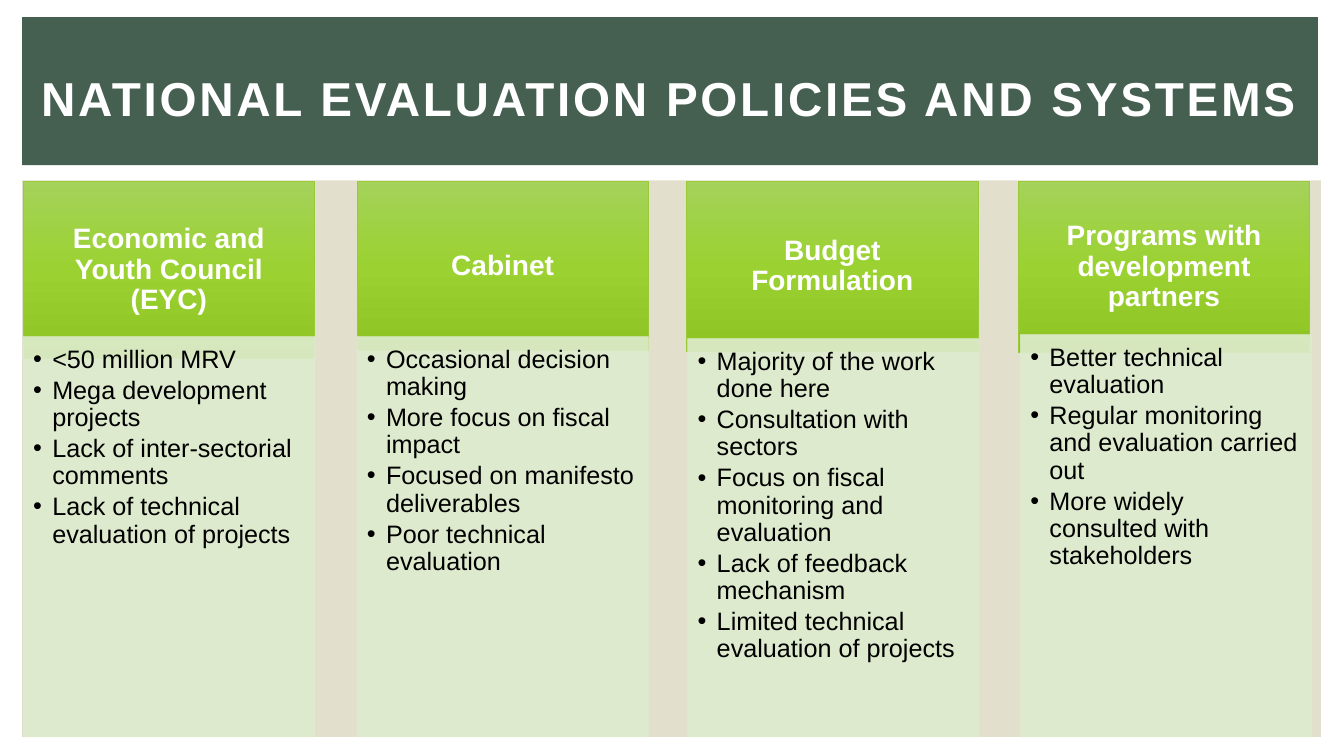
"""Builds the slide on national evaluation policies and systems."""
from copy import deepcopy

from lxml import etree
from pptx import Presentation
from pptx.dml.color import RGBColor
from pptx.enum.shapes import MSO_SHAPE
from pptx.enum.text import MSO_ANCHOR, PP_ALIGN
from pptx.oxml.ns import qn
from pptx.util import Inches, Pt

RECT = MSO_SHAPE.RECTANGLE
TOP, MIDDLE = MSO_ANCHOR.TOP, MSO_ANCHOR.MIDDLE
LEFT, CENTER = PP_ALIGN.LEFT, PP_ALIGN.CENTER

TITLE = "NATIONAL EVALUATION POLICIES AND SYSTEMS"
COLUMNS = [
    {"head": "Economic and Youth Council (EYC)", "head_at": (0.23, 1.76), "body_at": (0.23, 3.34),
     "items": ["<50 million MRV", "Mega development projects",
               "Lack of inter-sectorial comments",
               "Lack of technical evaluation of projects"]},
    {"head": "Cabinet", "head_at": (3.54, 1.68), "body_at": (3.54, 3.34),
     "items": ["Occasional decision making", "More focus on fiscal impact",
               "Focused on manifesto deliverables", "Poor technical evaluation"]},
    {"head": "Budget Formulation", "head_at": (6.81, 1.69), "body_at": (6.82, 3.36),
     "items": ["Majority of the work done here", "Consultation with sectors",
               "Focus on fiscal monitoring and evaluation",
               "Lack of feedback mechanism",
               "Limited technical evaluation of projects"]},
    {"head": "Programs with development partners", "head_at": (10.1, 1.7), "body_at": (10.12, 3.32),
     "items": ["Better technical evaluation",
               "Regular monitoring and evaluation carried out",
               "More widely consulted with stakeholders"]},
]
COLORS = {"panel": "E2DFCC", "banner": "455F51", "white": "FFFFFF", "black": "000000",
          "head_line": "99CB38", "body": "DEECCE"}
HEAD_STOPS = [(0, "A4D25A"), (0.5, "9BD231"), (1, "8DC323")]
COLUMN_WIDTH, HEAD_TOP, BODY_BOTTOM = 2.89, 1.8, 7.31
BODY_ALPHA, INDENT = 90, 0.19

TITLE_FONT = {"name": "Arial", "size": Pt(34), "bold": True}
HEAD_FONT = {"name": "Arial", "size": Pt(20), "bold": True}
BODY_FONT = {"name": "Arial", "size": Pt(18), "bold": False}
TITLE_PARA = {"alignment": LEFT}
HEAD_PARA = {"alignment": CENTER, "line_spacing": 0.9}
BODY_PARA = {"alignment": LEFT, "line_spacing": 0.9, "space_after": Pt(2.7)}


def rgb(name):
    return RGBColor.from_string(COLORS[name])


def add_rect(slide, box, fill=None, line=None):
    sp = slide.shapes.add_shape(RECT, *map(Inches, box))
    sp.shadow.inherit = False
    if fill:
        sp.fill.solid()
        sp.fill.fore_color.rgb = rgb(fill)
    if line:
        sp.line.color.rgb = rgb(line)
        sp.line.width = Pt(0.5)
    else:
        sp.line.fill.background()
    return sp


def shade(sp):
    sp.fill.gradient()
    sp.fill.gradient_angle = 270
    gs_list = sp._element.spPr.find(".//" + qn("a:gsLst"))
    gs_list.append(deepcopy(gs_list[-1]))
    for stop, (position, color) in zip(sp.fill.gradient_stops, HEAD_STOPS):
        stop.position = position
        stop.color.rgb = RGBColor.from_string(color)


def make_translucent(sp):
    for clr in sp._element.spPr.iter(qn("a:srgbClr")):
        etree.SubElement(clr, qn("a:alpha"), val=str(BODY_ALPHA * 1000))


def add_bullet(p):
    pPr = p._p.get_or_add_pPr()
    pPr.set("marL", str(Inches(INDENT)))
    pPr.set("indent", str(-Inches(INDENT)))
    etree.SubElement(pPr, qn("a:buFont"), typeface="Arial")
    etree.SubElement(pPr, qn("a:buChar"), char="•")


def write(sp, lines, insets, anchor, para, font, color, bullets=False):
    tf = sp.text_frame
    tf.word_wrap = True
    tf.vertical_anchor = anchor
    for side, inset in zip(("left", "top", "right", "bottom"), insets):
        setattr(tf, f"margin_{side}", Inches(inset))
    for i, line in enumerate(lines):
        p = tf.paragraphs[0] if i == 0 else tf.add_paragraph()
        if bullets:
            add_bullet(p)
        for key, value in para.items():
            setattr(p, key, value)
        r = p.add_run()
        r.text = line
        for key, value in font.items():
            setattr(r.font, key, value)
        r.font.color.rgb = rgb(color)


def add_column(slide, column):
    left, height = column["head_at"]
    head = add_rect(slide, (left, HEAD_TOP, COLUMN_WIDTH, height), line="head_line")
    shade(head)
    write(head, [column["head"]], (0.16, 0.09, 0.16, 0.09), MIDDLE,
          HEAD_PARA, HEAD_FONT, "white")
    left, top = column["body_at"]
    body = add_rect(slide, (left, top, COLUMN_WIDTH, BODY_BOTTOM - top), "body", "body")
    make_translucent(body)
    write(body, column["items"], (0.1, 0.1, 0.14, 0.16), TOP,
          BODY_PARA, BODY_FONT, "black", bullets=True)


def main():
    prs = Presentation()
    prs.slide_width, prs.slide_height = Inches(13.33), Inches(7.5)
    slide = prs.slides.add_slide(prs.slide_layouts[6])
    add_rect(slide, (0.22, 1.79, 12.88, 5.52), "panel")
    add_rect(slide, (0.22, 0.17, 12.85, 1.47), "banner")
    title = slide.shapes.add_textbox(*map(Inches, (0.31, 0.39, 12.7, 1.15)))
    write(title, [TITLE], (0.1, 0.05, 0, 0.05), MIDDLE, TITLE_PARA, TITLE_FONT, "white")
    title.text_frame.paragraphs[0].runs[0].font._element.set("spc", "200")
    for column in COLUMNS:
        add_column(slide, column)
    prs.save("out.pptx")


if __name__ == "__main__":
    main()
